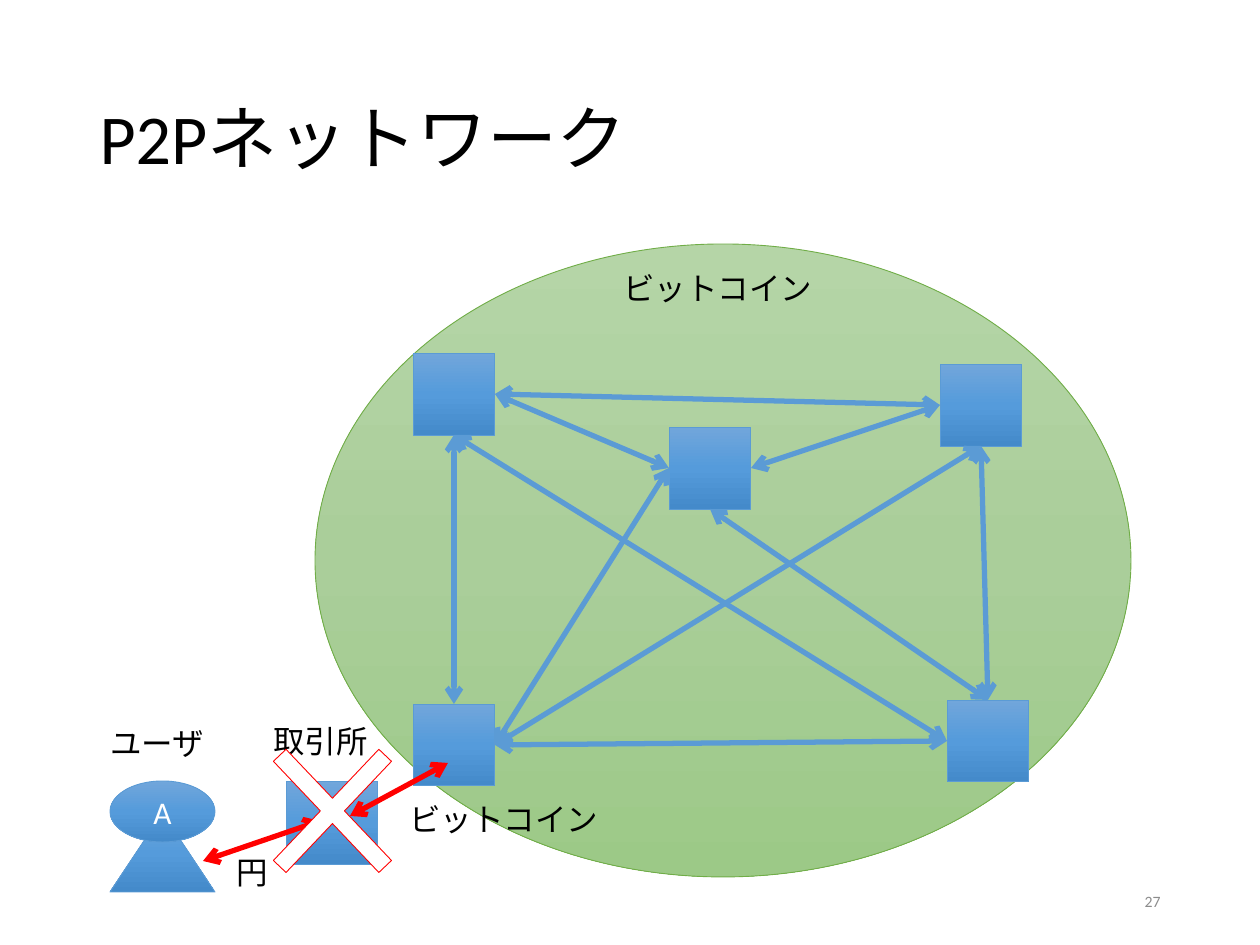
from copy import deepcopy
from dataclasses import dataclass

from lxml.etree import SubElement
from pptx import Presentation
from pptx.dml.color import RGBColor as RGB
from pptx.enum.shapes import MSO_CONNECTOR as Connector, MSO_SHAPE as Shape
from pptx.enum.text import MSO_ANCHOR as Anchor, MSO_AUTO_SIZE as AutoSize, PP_ALIGN as Align
from pptx.oxml.ns import qn
from pptx.util import Inches, Pt

PX = Inches(1) // 126
TOP, LEFT, BOTTOM, RIGHT = range(4)  # connection sites of a rectangle


@dataclass(frozen=True)
class Theme:
    font: str = "Calibri"
    title_size: int = 40
    label_size: int = 18
    number_size: int = 9
    text: str = "000000"
    muted: str = "8C8C8C"
    white: str = "FFFFFF"
    blue: str = "5B9BD5"
    green: str = "70AD47"
    red: str = "FF0000"
    blue_shades: tuple = ("71A6DB", "559BDB", "448ACA")
    green_shades: tuple = ("B5D5A7", "AACE9A", "9CC987")
    outline: float = 0.5
    arrow: float = 3


THEME = Theme()


def px(*lengths):
    return [length * PX for length in lengths]


def write(frame, text, size, color=THEME.text, align=Align.LEFT):
    frame.text = text
    paragraph = frame.paragraphs[0]
    paragraph.alignment = align
    font = paragraph.runs[0].font
    font.name = THEME.font
    font.size = Pt(size)
    font.color.rgb = RGB.from_string(color)
    return paragraph


def shade(shape, colors):
    """Fill from top to bottom with three evenly spaced colours."""
    shape.fill.gradient()
    shape.fill.gradient_angle = 270
    stop_list = shape._element.spPr.find(qn("a:gradFill")).find(qn("a:gsLst"))
    stop_list.insert(1, deepcopy(stop_list[0]))
    for stop, position, color in zip(shape.fill.gradient_stops, (0, 0.5, 1), colors):
        stop.position = position
        stop.color.rgb = RGB.from_string(color)


def add_figure(shapes, preset, box, shades=THEME.blue_shades, outline=THEME.blue):
    figure = shapes.add_shape(preset, *px(*box))
    figure.shadow.inherit = False
    if shades:
        shade(figure, shades)
    else:
        figure.fill.solid()
        figure.fill.fore_color.rgb = RGB.from_string(THEME.white)
    figure.line.color.rgb = RGB.from_string(outline)
    figure.line.width = Pt(THEME.outline)
    return figure


def add_arrow(shapes, start=(0, 0), end=(0, 0), color=THEME.blue):
    arrow = shapes.add_connector(Connector.STRAIGHT, *px(*start, *end))
    arrow.line.color.rgb = RGB.from_string(color)
    arrow.line.width = Pt(THEME.arrow)
    line = arrow.line._get_or_add_ln()
    for tag in ("a:headEnd", "a:tailEnd"):
        SubElement(line, qn(tag), type="arrow")
    SubElement(arrow._element.spPr, qn("a:effectLst"))
    return arrow


def link(shapes, start, start_site, end, end_site):
    arrow = add_arrow(shapes)
    arrow.begin_connect(start, start_site)
    arrow.end_connect(end, end_site)


def add_label(shapes, text, box):
    frame = shapes.add_textbox(*px(*box)).text_frame
    frame.word_wrap = False
    frame.auto_size = AutoSize.SHAPE_TO_FIT_TEXT
    write(frame, text, THEME.label_size)


def add_title(slide, text):
    title = slide.shapes.title
    title.left, title.top, title.width, title.height = px(87, 50, 1086, 183)
    title.text_frame.vertical_anchor = Anchor.MIDDLE
    write(title.text_frame, text, THEME.title_size).line_spacing = 0.9


def add_page_number(shapes, number):
    frame = shapes.add_textbox(*px(890, 876, 283, 50)).text_frame
    frame.word_wrap = True
    frame.vertical_anchor = Anchor.MIDDLE
    write(frame, number, THEME.number_size, THEME.muted, Align.RIGHT)


def add_network(shapes):
    corners = [(413, 353), (940, 364), (669, 427), (413, 704), (947, 700)]
    nodes = [add_figure(shapes, Shape.RECTANGLE, (*corner, 82, 82)) for corner in corners]
    upper_left, upper_right, center, lower_left, lower_right = nodes
    for ends in (
        (upper_left, RIGHT, upper_right, LEFT),
        (center, RIGHT, upper_right, LEFT),
        (upper_left, RIGHT, center, LEFT),
        (upper_left, BOTTOM, lower_left, TOP),
        (lower_left, RIGHT, center, LEFT),
        (lower_left, RIGHT, lower_right, LEFT),
        (lower_right, TOP, upper_right, BOTTOM),
        (center, BOTTOM, lower_right, TOP),
        (upper_left, BOTTOM, lower_right, LEFT),
        (lower_left, RIGHT, upper_right, BOTTOM),
    ):
        link(shapes, *ends)


def add_user(shapes, name):
    user = shapes.add_group_shape().shapes
    add_figure(user, Shape.ISOSCELES_TRIANGLE, (110, 813, 105, 79))
    head = add_figure(user, Shape.OVAL, (110, 781, 105, 61))
    head.text_frame.vertical_anchor = Anchor.MIDDLE
    write(head.text_frame, name, THEME.label_size, THEME.white, Align.CENTER)


def main():
    deck = Presentation()
    deck.slide_width, deck.slide_height = px(1260, 945)
    slide = deck.slides.add_slide(deck.slide_layouts[5])
    shapes = slide.shapes

    # Peer-to-peer network
    add_title(slide, "P2Pネットワーク")
    add_figure(shapes, Shape.OVAL, (315, 244, 816, 633), THEME.green_shades, THEME.green)
    add_page_number(shapes, "27")
    add_network(shapes)
    add_label(shapes, "ビットコイン", (611, 263, 217, 50))

    # User and exchange
    add_figure(shapes, Shape.RECTANGLE, (287, 781, 91, 84))
    add_user(shapes, "A")
    add_label(shapes, "ユーザ", (98, 718, 121, 50))
    add_label(shapes, "取引所", (261, 716, 121, 50))

    # Payments
    add_arrow(shapes, (203, 861), (320, 821), THEME.red)
    add_label(shapes, "円", (224, 847, 57, 50))
    add_arrow(shapes, (350, 816), (448, 763), THEME.red)
    add_label(shapes, "ビットコイン", (397, 794, 217, 50))

    # Cross over the exchange
    cross = add_figure(shapes, Shape.MATH_MULTIPLY, (231, 704, 203, 214), None, THEME.red)
    cross.adjustments[0] = 0.086

    deck.save("out.pptx")


if __name__ == "__main__":
    main()
